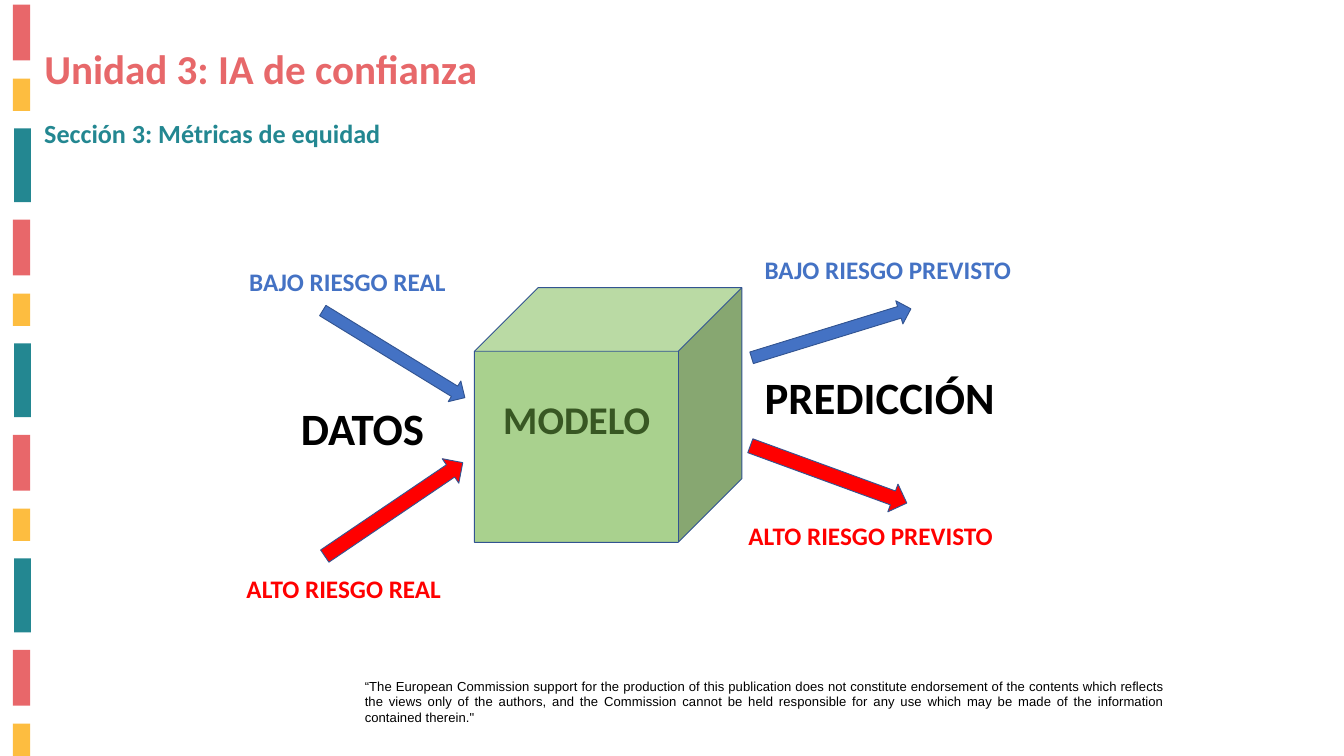
from dataclasses import dataclass
from itertools import product

from pptx import Presentation
from pptx.dml.color import RGBColor
from pptx.enum.shapes import MSO_SHAPE
from pptx.enum.text import MSO_ANCHOR, MSO_AUTO_SIZE, PP_ALIGN
from pptx.shapes.autoshape import Shape
from pptx.slide import Slide
from pptx.util import Inches, Pt


@dataclass(frozen=True)
class Theme:
    coral: str = "E8676A"
    title: str = "E7686A"
    yellow: str = "FDBD40"
    teal: str = "238791"
    low: str = "4472C4"
    high: str = "FF0000"
    cube: str = "A9D18E"
    model: str = "385723"
    outline: str = "325491"
    black: str = "000000"
    heading_font: str = "Calibri"
    note_font: str = "Arial"
    title_size: float = 44
    section_size: float = 28
    stage_size: float = 48
    model_size: float = 42
    risk_size: float = 27
    note_size: float = 14


THEME = Theme()


@dataclass(frozen=True)
class Area:
    left: float
    top: float
    width: float
    height: float

    def lengths(self) -> list[int]:
        return [Inches(value) for value in (self.left, self.top, self.width, self.height)]


@dataclass(frozen=True)
class Label:
    text: str
    area: Area
    size: float
    color: str
    font: str = THEME.heading_font
    bold: bool = True


@dataclass(frozen=True)
class Solid:
    kind: MSO_SHAPE
    area: Area
    color: str
    rotation: float = 0
    outlined: bool = True


STRIPE_PERIOD = 3.2
STRIPES = (
    Solid(MSO_SHAPE.RECTANGLE, Area(0.19, 0.07, 0.26, 0.83), THEME.coral, outlined=False),
    Solid(MSO_SHAPE.RECTANGLE, Area(0.19, 1.17, 0.26, 0.48), THEME.yellow, outlined=False),
    Solid(MSO_SHAPE.RECTANGLE, Area(0.21, 1.91, 0.25, 1.1), THEME.teal, outlined=False),
)
DIAGRAM = (
    Solid(MSO_SHAPE.CUBE, Area(7.06, 4.28, 3.98, 3.79), THEME.cube),
    Solid(MSO_SHAPE.RIGHT_ARROW, Area(4.62, 5.09, 2.48, 0.36), THEME.low, 31.5),
    Solid(MSO_SHAPE.RIGHT_ARROW, Area(4.62, 7.36, 2.48, 0.44), THEME.high, 325.9),
    Solid(MSO_SHAPE.RIGHT_ARROW, Area(11.13, 4.78, 2.48, 0.36), THEME.low, 342.9),
    Solid(MSO_SHAPE.RIGHT_ARROW, Area(11.09, 6.84, 2.48, 0.44), THEME.high, 20.1),
)
TITLE = Label("Unidad 3: IA de confianza", Area(0.56, 0.68, 8.11, 0.61),
              THEME.title_size, THEME.title)
LABELS = (
    Label("Sección 3: Métricas de equidad", Area(0.56, 1.7, 10.98, 0.57),
          THEME.section_size, THEME.teal),
    Label("BAJO RIESGO REAL", Area(3.61, 3.91, 3.46, 0.56), THEME.risk_size, THEME.low),
    Label("DATOS", Area(4.38, 5.91, 2.24, 0.91), THEME.stage_size, THEME.black),
    Label("ALTO RIESGO REAL", Area(3.57, 8.48, 3.5, 0.56), THEME.risk_size, THEME.high),
    Label("MODELO", Area(7.39, 5.84, 2.42, 0.81), THEME.model_size, THEME.model),
    Label("BAJO RIESGO PREVISTO", Area(11.28, 3.74, 4.55, 0.56), THEME.risk_size, THEME.low),
    Label("PREDICCIÓN", Area(11.28, 5.45, 4.81, 0.91), THEME.stage_size, THEME.black),
    Label("ALTO RIESGO PREVISTO", Area(11.04, 7.69, 4.96, 0.56), THEME.risk_size, THEME.high),
)
NOTE = Label(
    "“The European Commission support for the production of this publication does not "
    "constitute endorsement of the contents which reflects the views only of the authors, "
    "and the Commission cannot be held responsible for any use which may be made of the "
    "information contained therein.\"",
    Area(5.33, 10.04, 12.1, 0.81), THEME.note_size, THEME.black, THEME.note_font, False,
)


def apply_format(target: object, values: dict[str, object]) -> None:
    for name, value in values.items():
        setattr(target, name, value)


def write_label(box: Shape, label: Label, align: PP_ALIGN = PP_ALIGN.LEFT) -> None:
    apply_format(box.text_frame, {
        "word_wrap": True,
        "auto_size": MSO_AUTO_SIZE.SHAPE_TO_FIT_TEXT,
        "vertical_anchor": MSO_ANCHOR.TOP,
    })
    para = box.text_frame.paragraphs[0]
    para.alignment = align
    span = para.add_run()
    span.text = label.text
    apply_format(span.font, {"name": label.font, "size": Pt(label.size), "bold": label.bold})
    span.font.color.rgb = RGBColor.from_string(label.color)


def add_label(slide: Slide, label: Label, align: PP_ALIGN = PP_ALIGN.LEFT) -> Shape:
    box = slide.shapes.add_textbox(*label.area.lengths())
    write_label(box, label, align)
    return box


def add_title(slide: Slide, label: Label) -> None:
    title = slide.shapes.title
    apply_format(title, dict(zip(("left", "top", "width", "height"), label.area.lengths())))
    write_label(title, label)
    title.text_frame.auto_size = MSO_AUTO_SIZE.NONE
    title.text_frame.paragraphs[0].line_spacing = 0.9


def add_solid(slide: Slide, solid: Solid, drop: float = 0) -> None:
    shape = slide.shapes.add_shape(solid.kind, *solid.area.lengths())
    apply_format(shape, {"top": shape.top + Inches(drop), "rotation": solid.rotation})
    shape.shadow.inherit = False
    shape.fill.solid()
    shape.fill.fore_color.rgb = RGBColor.from_string(solid.color)
    if solid.outlined:
        shape.line.color.rgb = RGBColor.from_string(THEME.outline)
        shape.line.width = Pt(1)
    else:
        shape.line.fill.background()


def main() -> None:
    deck = Presentation()
    apply_format(deck, {"slide_width": Inches(20), "slide_height": Inches(11.25)})
    slide = deck.slides.add_slide(deck.slide_layouts.get_by_name("Title Only"))

    stripes = list(product(range(4), STRIPES))[:-1]
    for cycle, stripe in stripes:
        add_solid(slide, stripe, cycle * STRIPE_PERIOD)

    note = add_label(slide, NOTE, PP_ALIGN.JUSTIFY)
    note.text_frame.paragraphs[0].runs[0].font._element.set("spc", "5")

    for solid in DIAGRAM:
        add_solid(slide, solid)
    add_title(slide, TITLE)
    for label in LABELS:
        add_label(slide, label)
    deck.save("out.pptx")


if __name__ == "__main__":
    main()
